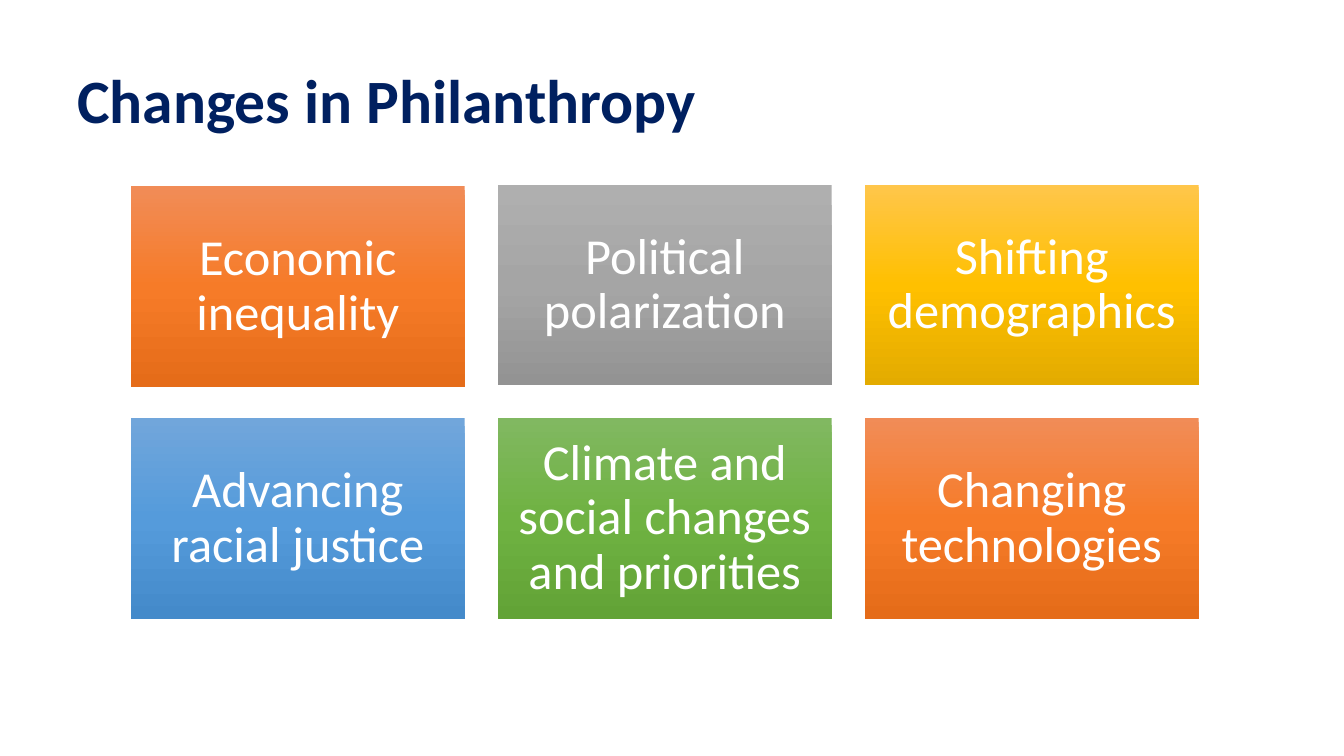
"""Build the slide on changes in philanthropy: a title above a grid of six tiles."""
from copy import deepcopy
from dataclasses import dataclass

from pptx import Presentation
from pptx import util as u
from pptx.dml import color
from pptx.enum import shapes, text
from pptx.oxml import ns

COLORS = {"title": "002060", "label": "FFFFFF"}
GRADIENTS = {
    "orange": ("F18C57", "F67B28", "E56C19"),
    "gray": ("AFAFAF", "A5A5A5", "939393"),
    "gold": ("FFC64B", "FFC000", "E3AB00"),
    "blue": ("71A6DB", "559BDB", "448ACA"),
    "green": ("81B861", "6FB242", "62A336"),
}
COLUMNS = 3
GRID_LEFT, GRID_TOP = 93.6, 131.9
TILE_WIDTH, TILE_HEIGHT = 238.3, 143.3
STEP_X, STEP_Y = 262.1, 166.9
TILE_INSET = 10.8


@dataclass(frozen=True)
class Tile:
    label: str
    gradient: str
    nudge: float = 0


TILES = (
    Tile("Economic inequality", "orange", nudge=1.2),
    Tile("Political polarization", "gray"),
    Tile("Shifting demographics", "gold"),
    Tile("Advancing racial justice", "blue"),
    Tile("Climate and social changes and priorities", "green"),
    Tile("Changing technologies", "orange"),
)


def apply(target: object, values: dict) -> None:
    for name, value in values.items():
        setattr(target, name, value)


def write(tf, content: str, size: float, hue: str, bold: bool, align) -> None:
    apply(tf, {"word_wrap": True, "vertical_anchor": text.MSO_ANCHOR.MIDDLE})
    p = tf.paragraphs[0]
    apply(p, {"alignment": align, "line_spacing": 0.9})
    r = p.add_run()
    r.text = content
    apply(r.font, {"name": "Calibri", "size": u.Pt(size), "bold": bold})
    r.font.color.rgb = color.RGBColor.from_string(COLORS[hue])


def fill_gradient(sp, hues: tuple[str, ...]) -> None:
    sp.fill.gradient()
    sp.fill.gradient_angle = 270
    stop_list = sp.fill._xPr.find(".//" + ns.qn("a:gsLst"))
    stop_list.append(deepcopy(stop_list[-1]))
    for i, (stop, hue) in enumerate(zip(sp.fill.gradient_stops, hues)):
        stop.position = i / (len(hues) - 1)
        stop.color.rgb = color.RGBColor.from_string(hue)


def add_title(s, content: str) -> None:
    sp = s.shapes.title
    apply(sp, {"left": u.Pt(48), "top": u.Pt(46),
               "width": u.Pt(764.6), "height": u.Pt(55.5)})
    sp.text_frame.auto_size = text.MSO_AUTO_SIZE.SHAPE_TO_FIT_TEXT
    write(sp.text_frame, content, 44, "title", True, text.PP_ALIGN.LEFT)


def add_tile(s, tile: Tile, index: int) -> None:
    row, column = divmod(index, COLUMNS)
    sp = s.shapes.add_shape(
        shapes.MSO_SHAPE.RECTANGLE,
        u.Pt(GRID_LEFT + column * STEP_X),
        u.Pt(GRID_TOP + row * STEP_Y + tile.nudge),
        u.Pt(TILE_WIDTH), u.Pt(TILE_HEIGHT))
    sp.shadow.inherit = False
    sp.line.fill.background()
    fill_gradient(sp, GRADIENTS[tile.gradient])
    apply(sp.text_frame, {f"margin_{side}": u.Pt(TILE_INSET)
                          for side in ("left", "top", "right", "bottom")})
    write(sp.text_frame, tile.label, 36, "label", False, text.PP_ALIGN.CENTER)


def main() -> None:
    prs = Presentation()
    apply(prs, {"slide_width": u.Pt(960), "slide_height": u.Pt(540)})
    s = prs.slides.add_slide(prs.slide_layouts[5])
    add_title(s, "Changes in Philanthropy")
    for index, tile in enumerate(TILES):
        add_tile(s, tile, index)
    prs.save("out.pptx")


if __name__ == "__main__":
    main()
